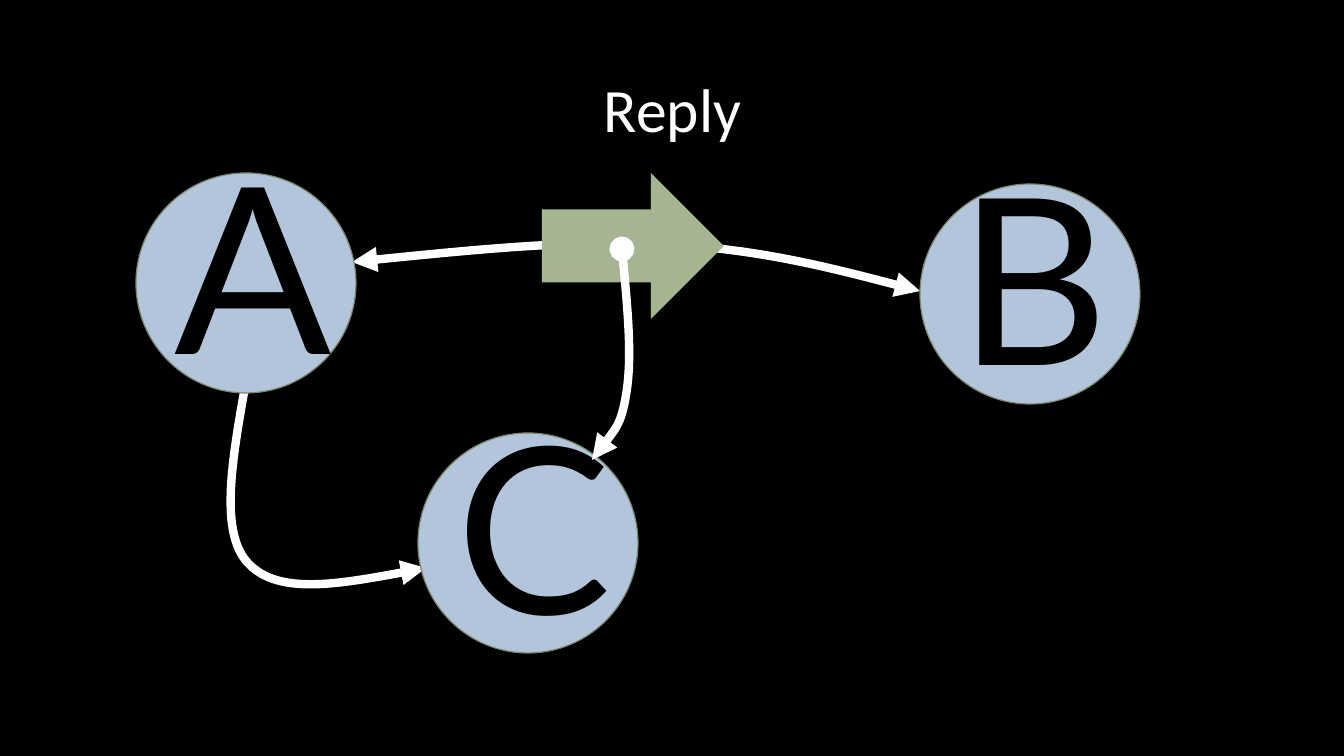
from lxml import etree
from pptx import Presentation
from pptx.dml.color import RGBColor
from pptx.enum.shapes import MSO_SHAPE as SHAPE
from pptx.enum.text import MSO_ANCHOR as ANCHOR, MSO_AUTO_SIZE as AUTO, PP_ALIGN as ALIGN
from pptx.oxml.ns import qn
from pptx.util import Pt

PX = 12192000 / 1344  # EMU per pixel
COLORS = {"back": "000000", "light": "FFFFFF", "node": "B3C5DA",
          "rim": "7A866C", "arrow": "A5B592", "letter": "000000"}
NODE_SIZE = 220
NODES = [("A", 136, 173), ("B", 920, 184), ("C", 418, 433)]

# Start point, then two controls and an end for each cubic segment
A_TO_C = [(245, 387), (232, 461), (219, 534), (249, 564),
          (279, 595), (353, 582), (426, 568)]
A_TO_B = [(352, 262), (461, 251), (569, 240), (663, 244),
          (758, 249), (840, 270), (920, 291)]
REPLY_TO_C = [(622, 249), (627, 301), (632, 354), (627, 389),
              (622, 424), (607, 441), (592, 460)]


def px(*lengths):
    return [round(n * PX) for n in lengths]


def color(name):
    return RGBColor.from_string(COLORS[name])


def style_text(tf, size, font, color_name):
    p = tf.paragraphs[0]
    p.alignment = ALIGN.CENTER
    p.font.size, p.font.name = Pt(size), font
    p.font.color.rgb = color(color_name)
    return p


def fill_shape(sp, name):
    sp.shadow.inherit = False
    sp.fill.solid()
    sp.fill.fore_color.rgb = color(name)


def add_title(s, text, x, y, w, h):
    title = s.shapes.title
    title.left, title.top, title.width, title.height = px(x, y, w, h)
    tf = title.text_frame
    tf.text = text
    tf.auto_size, tf.vertical_anchor = AUTO.NONE, ANCHOR.MIDDLE
    style_text(tf, 44, "Calibri", "light").line_spacing = 0.9


def add_node(s, letter, x, y):
    group = s.shapes.add_group_shape()
    disc = group.shapes.add_shape(SHAPE.OVAL, *px(x, y, NODE_SIZE, NODE_SIZE))
    fill_shape(disc, "node")
    disc.line.color.rgb = color("rim")
    disc.line.width = Pt(0.85)
    tf = group.shapes.add_textbox(*px(x + 29, y - 56, 152, 291)).text_frame
    tf.text = letter
    tf.word_wrap, tf.auto_size = True, AUTO.SHAPE_TO_FIT_TEXT
    style_text(tf, 166, "Lato", "letter")


def add_reply_arrow(s, x, y, w, h):
    arrow = s.shapes.add_shape(SHAPE.RIGHT_ARROW, *px(x, y, w, h))
    fill_shape(arrow, "arrow")
    arrow.line.fill.background()


def add_curve(s, points, head=None):
    builder = s.shapes.build_freeform(*points[0], scale=PX)
    builder.add_line_segments(points[1:], close=False)
    sp = builder.convert_to_shape()
    sp.shadow.inherit = False
    sp.fill.background()
    sp.line.color.rgb = color("light")
    sp.line.width = Pt(6)

    # Turn each three line points into one cubic segment
    path = next(sp.element.iter(qn("a:path")))
    steps = path.findall(qn("a:lnTo"))
    for i in range(0, len(steps), 3):
        cubic = etree.SubElement(path, qn("a:cubicBezTo"))
        for step in steps[i:i + 3]:
            cubic.append(step[0])
            path.remove(step)

    # Arrowheads
    ln = sp.element.spPr.find(qn("a:ln"))
    for tag, kind in (("a:headEnd", head), ("a:tailEnd", "triangle")):
        if kind:
            etree.SubElement(ln, qn(tag), type=kind)


def main():
    prs = Presentation()
    prs.slide_width, prs.slide_height = px(1344, 756)
    s = prs.slides.add_slide(prs.slide_layouts[5])
    s.background.fill.solid()
    s.background.fill.fore_color.rgb = color("back")

    add_title(s, "Reply", 93, 40, 1159, 146)
    # Curves behind the nodes
    add_curve(s, A_TO_C)
    add_curve(s, A_TO_B, head="triangle")
    for letter, x, y in NODES:
        add_node(s, letter, x, y)
    # Reply arrow with its branch to C
    add_reply_arrow(s, 542, 173, 182, 146)
    add_curve(s, REPLY_TO_C, head="oval")
    prs.save("out.pptx")


if __name__ == "__main__":
    main()
